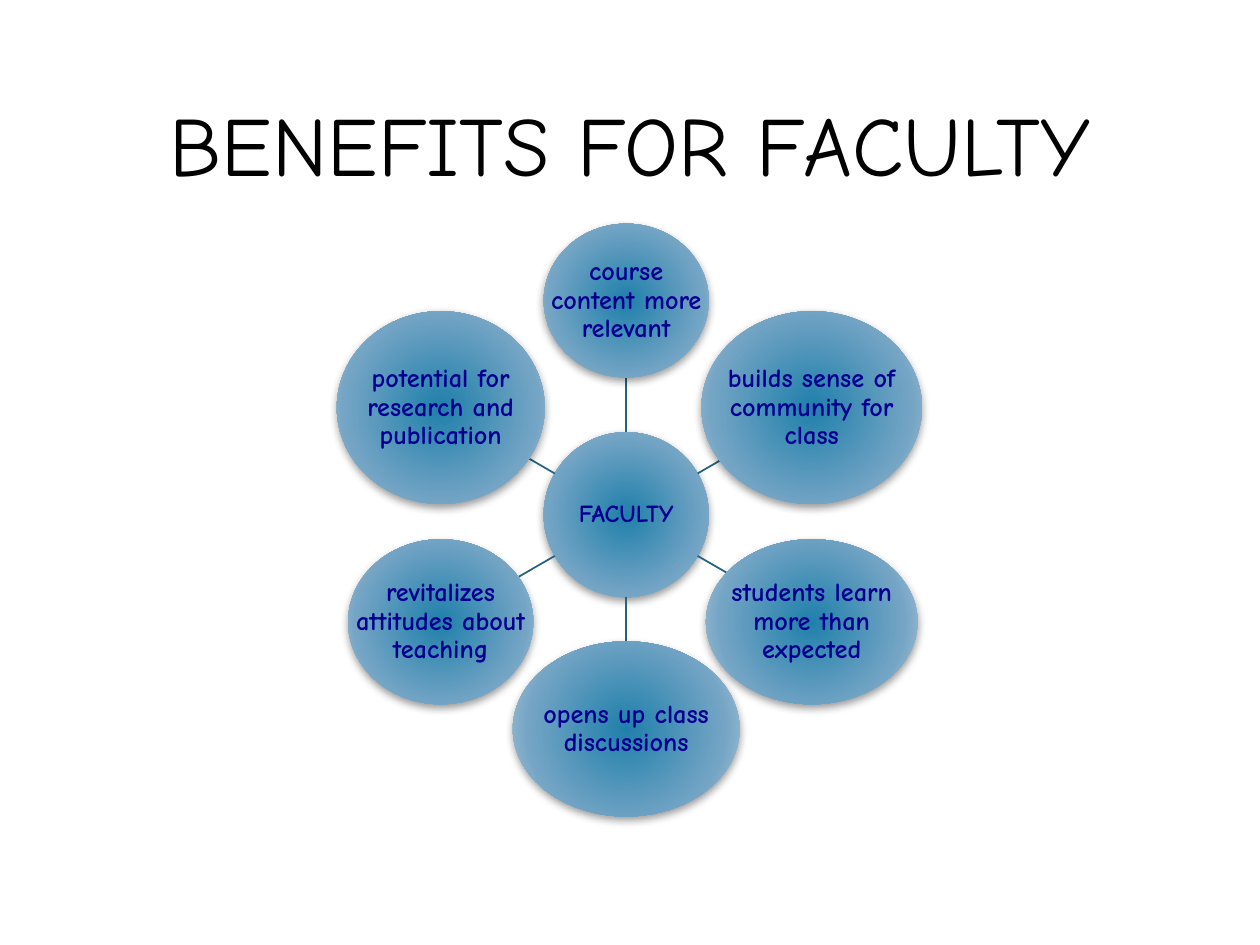
"""Build a hub-and-spoke slide on the benefits for faculty."""
import math

from lxml import etree
from pptx import Presentation, oxml, util as u
from pptx.dml.color import RGBColor
from pptx.enum import shapes, text

COLORS = {"title": "000000", "label": "000090", "spoke": "23637F",
          "core": "2080AB", "middle": "75A5C5", "rim": "B8CCDC", "shadow": "000000"}
COLUMNS, ROWS = 10, 7.5
HUB_X, HUB_Y, HUB_SIZE, ORBIT = 4.97, 4.085, 1.31, 1.7
BENEFITS = [("course content more relevant", 1.31, 1.22),
            ("builds sense of community for class", 1.75, 1.53),
            ("students learn more than expected", 1.68, 1.31),
            ("opens up class discussions", 1.8, 1.39),
            ("revitalizes attitudes about teaching", 1.47, 1.31),
            ("potential for research and publication", 1.65, 1.53)]
NAMESPACE = "http://schemas.openxmlformats.org/drawingml/2006/main"


def write(frame, words, size=15, color="label", bold=True, spacing=0.9,
          anchor=text.MSO_ANCHOR.MIDDLE, inset=0.01):
    """Fill a text frame with one centred, formatted paragraph."""
    frame.word_wrap = True
    frame.vertical_anchor = anchor
    frame.margin_left = frame.margin_right = u.Inches(inset)
    frame.margin_top = frame.margin_bottom = u.Inches(inset)
    para = frame.paragraphs[0]
    para.alignment = text.PP_ALIGN.CENTER
    para.line_spacing = spacing
    span = para.add_run()
    span.text = words
    span.font.name = "Comic Neue"
    span.font.size = u.Pt(size)
    span.font.bold = bold
    span.font.color.rgb = RGBColor.from_string(COLORS[color])


def ellipse_reach(width, height, angle):
    """Return the distance from an ellipse's centre to its edge at an angle."""
    return 1 / math.hypot(2 * math.cos(angle) / width, 2 * math.sin(angle) / height)


class Board:
    """Hold the grid, the style and the current page."""

    def __init__(self, deck):
        self.column = deck.slide_width / COLUMNS
        self.row = deck.slide_height / ROWS
        self.page = deck.slides.add_slide(deck.slide_layouts[6])

    def place(self, *lengths):
        """Turn alternating columns and rows into slide lengths."""
        return [round(length * (self.row if index % 2 else self.column))
                for index, length in enumerate(lengths)]

    def label(self, words, left, top, width, height, **style):
        """Add a text box."""
        box = self.page.shapes.add_textbox(*self.place(left, top, width, height))
        write(box.text_frame, words, **style)

    def bubble(self, words, x, y, width, height, **style):
        """Add a shaded ellipse centred on a point, with its label."""
        frame = (x - width / 2, y - height / 2, width, height)
        oval = self.page.shapes.add_shape(shapes.MSO_SHAPE.OVAL, *self.place(*frame))
        oval.line.fill.background()
        stops = "".join(
            f'<a:gs pos="{share * 1000}"><a:srgbClr val="{COLORS[name]}"/></a:gs>'
            for share, name in ((0, "core"), (69, "middle"), (100, "rim")))
        oval.line._get_or_add_ln().addprevious(oxml.parse_xml(
            f'<a:gradFill xmlns:a="{NAMESPACE}" rotWithShape="1"><a:gsLst>{stops}</a:gsLst>'
            '<a:path path="circle"><a:fillToRect l="100000" t="100000" r="100000" b="100000"/>'
            '</a:path></a:gradFill>'))
        oval._element.spPr.append(oxml.parse_xml(
            f'<a:effectLst xmlns:a="{NAMESPACE}">'
            f'<a:outerShdw blurRad="{u.Pt(5)}" dist="{u.Pt(2)}" dir="5400000" rotWithShape="0">'
            f'<a:srgbClr val="{COLORS["shadow"]}"><a:alpha val="40000"/></a:srgbClr>'
            '</a:outerShdw></a:effectLst>'))
        self.label(words, *frame, **style)

    def spoke(self, angle, start, end):
        """Add a line along a ray from the hub, between two distances."""
        points = [part for reach in (start, end)
                  for part in (HUB_X + reach * math.cos(angle),
                               HUB_Y + reach * math.sin(angle))]
        line = self.page.shapes.add_connector(
            shapes.MSO_CONNECTOR.STRAIGHT, *self.place(*points))
        line.line.width = u.Pt(1)
        line.line.color.rgb = RGBColor.from_string(COLORS["spoke"])
        etree.SubElement(line._element.spPr, f"{{{NAMESPACE}}}effectLst")


def main():
    """Build and save the deck."""
    deck = Presentation()
    deck.slide_width, deck.slide_height = u.Inches(10), u.Inches(7.5)
    board = Board(deck)
    board.label("BENEFITS FOR FACULTY", 0.6, 0.12, 8.8, 1.46, size=48, color="title",
                bold=False, spacing=1, anchor=text.MSO_ANCHOR.BOTTOM, inset=0.05)
    board.bubble("FACULTY", HUB_X, HUB_Y, HUB_SIZE, HUB_SIZE, size=14)
    for index, (words, width, height) in enumerate(BENEFITS):
        angle = math.tau * index / len(BENEFITS) - math.pi / 2
        board.spoke(angle, HUB_SIZE / 2, ORBIT - ellipse_reach(width, height, angle))
        board.bubble(words, HUB_X + ORBIT * math.cos(angle),
                     HUB_Y + ORBIT * math.sin(angle), width, height)
    deck.save("out.pptx")


if __name__ == "__main__":
    main()
